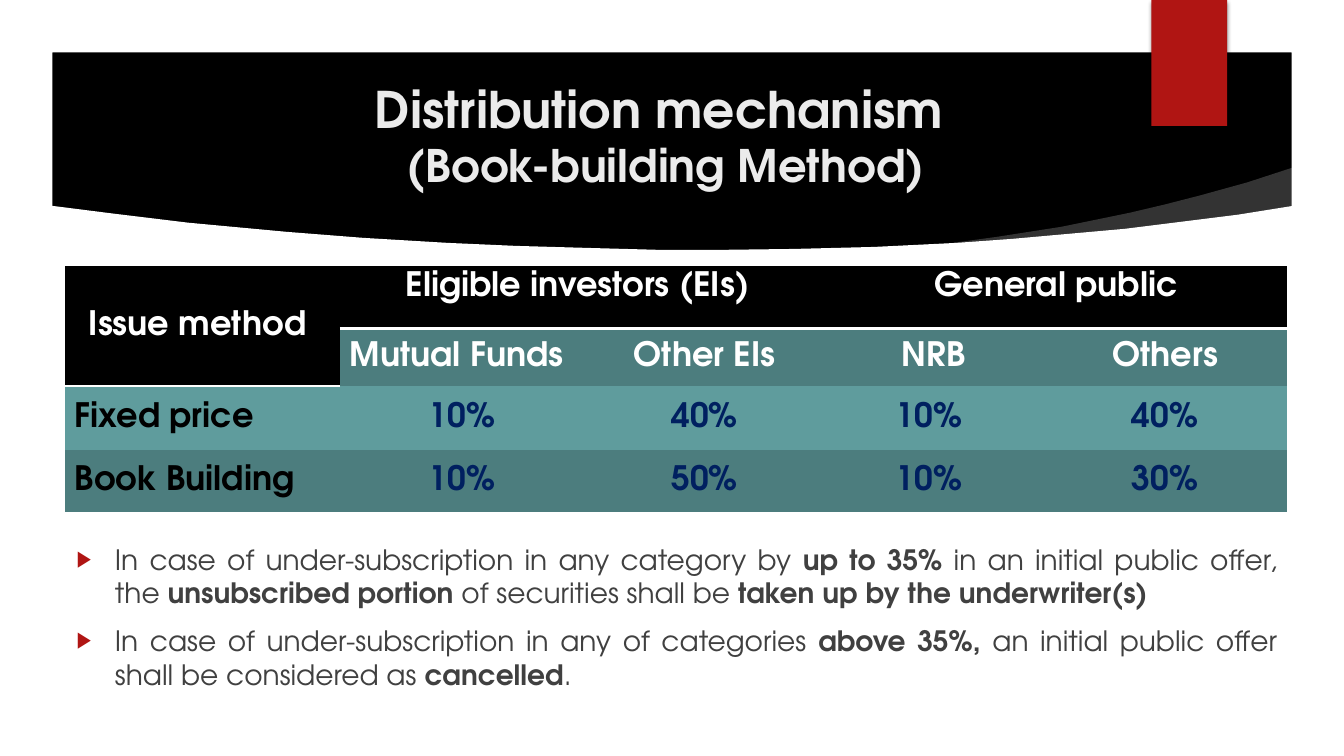
from lxml import etree
from pptx import Presentation
from pptx.dml.color import RGBColor
from pptx.enum.shapes import MSO_SHAPE
from pptx.enum.text import MSO_ANCHOR, MSO_AUTO_SIZE, PP_ALIGN
from pptx.oxml.ns import nsdecls, qn
from pptx.oxml import parse_xml
from pptx.util import Inches, Pt

LEFT, CENTER, JUSTIFY = PP_ALIGN.LEFT, PP_ALIGN.CENTER, PP_ALIGN.JUSTIFY
TOP, MIDDLE = MSO_ANCHOR.TOP, MSO_ANCHOR.MIDDLE
RECT = MSO_SHAPE.RECTANGLE
NO_FIT = MSO_AUTO_SIZE.NONE

FONT = "TeX Gyre Adventor"
WHITE = RGBColor(0xFF, 0xFF, 0xFF)
BLACK = RGBColor(0x00, 0x00, 0x00)
RED = RGBColor(0xB0, 0x15, 0x13)
PALE = RGBColor(0xEB, 0xEB, 0xEB)
GREY = RGBColor(0x40, 0x40, 0x40)
NAVY = RGBColor(0x00, 0x20, 0x60)
TEAL = RGBColor(0x5F, 0x9C, 0x9D)
DARK_TEAL = RGBColor(0x4C, 0x7D, 0x7E)
PLAIN_TABLE = "{2D5ABB26-0587-4C30-8999-92F81FD0307C}"

TITLE = [("Distribution mechanism ", 36), ("(Book-building Method)", 32)]
ROWS = [
    ["Issue method ", "Eligible investors (EIs) ", "", "General public", ""],
    ["", "Mutual Funds", "Other EIs ", "NRB", "Others"],
    ["Fixed price", "10% ", "40% ", "10% ", "40%"],
    ["Book Building", "10% ", "50% ", "10% ", "30%"],
]
MERGES = [((0, 0), (1, 0)), ((0, 1), (0, 2)), ((0, 3), (0, 4))]
ROW_FILLS = [BLACK, DARK_TEAL, TEAL, DARK_TEAL]
COL_WIDTHS = [2.73, 2.52, 2.29, 2.16, 2.43]
ROW_HEIGHTS = [0.62, 0.57, 0.63, 0.62]
BULLETS = [
    [("In case of under-subscription in any category by ", False),
     ("up to 35% ", True), ("in an initial public offer, the ", False),
     ("unsubscribed portion ", True), ("of securities shall be ", False),
     ("taken up by the underwriter(s)", True)],
    [("In case of under-subscription in any of categories ", False),
     ("above 35%, ", True),
     ("an initial public offer shall be considered as ", False),
     ("cancelled", True), (".", False)],
]
SLIDE_W, SLIDE_H = 13.33, 7.5
SLIDE_EDGE = [(0, 0), (0, SLIDE_H), (SLIDE_W, SLIDE_H), (SLIDE_W, 0)]
WINDOW = [(12.81, 6.98), (12.81, 0.52), (0.52, 0.52), (0.52, 6.98)]
PAGE_CURVE = [
    (0.5, 2.04), (1.13, 2.12), (1.87, 2.21), (2.84, 2.3), (3.6, 2.36),
    (4.44, 2.41), (5.12, 2.44), (5.83, 2.46), (6.57, 2.48), (7.08, 2.48),
    (7.87, 2.47), (8.67, 2.45), (9.49, 2.41), (10.04, 2.37), (10.6, 2.32),
    (11.16, 2.27), (11.72, 2.2), (12.28, 2.13), (12.84, 2.04)]
PAGE = PAGE_CURVE + [(12.84, 7), (0.5, 7)]
SWOOSH = [
    (9.34, 2.5), (10.4, 2.46), (11.8, 2.3), (12.9, 2.14), (12.83, 1.66),
    (12.37, 1.81), (11.9, 1.94), (11.55, 2.03), (11.21, 2.11), (10.87, 2.18),
    (10.53, 2.25), (10.21, 2.3), (9.89, 2.35), (9.3, 2.43)]


def add_run(p, text, size=20, color=GREY, bold=True):
    """Add a formatted run to a paragraph."""
    r = p.add_run()
    r.text = text
    r.font.name, r.font.size, r.font.bold = FONT, Pt(size), bold
    r.font.color.rgb = color


def paint(sp, color):
    """Give a shape a flat fill without outline or shadow."""
    sp.fill.solid()
    sp.fill.fore_color.rgb = color
    sp.line.fill.background()
    sp.shadow.inherit = False


def add_outline(s, *contours):
    """Draw one white shape from closed contours given in inches."""
    outlines = [[(Inches(x), Inches(y)) for x, y in c] for c in contours]
    builder = s.shapes.build_freeform(*outlines[0][0])
    for i, corners in enumerate(outlines):
        if i:
            builder.move_to(*corners[0])
        builder.add_line_segments(corners[1:], close=True)
    sp = builder.convert_to_shape()
    paint(sp, WHITE)
    return sp


def add_backdrop(s):
    """Draw the white frame and page around the banner, and the red tab."""
    add_outline(s, SLIDE_EDGE, WINDOW)
    swoosh = add_outline(s, SWOOSH)
    color = swoosh._element.spPr.find(qn("a:solidFill"))[0]
    etree.SubElement(color, qn("a:alpha"), val="20000")
    add_outline(s, PAGE)
    tab = s.shapes.add_shape(RECT, Inches(11.42), 0, Inches(0.75), Inches(1.25))
    paint(tab, RED)
    tab._element.spPr.find(qn("a:effectLst")).append(parse_xml(
        f'<a:outerShdw {nsdecls("a")} blurRad="{Pt(3)}" dist="{Pt(2)}" '
        'dir="5400000"><a:srgbClr val="000000"><a:alpha val="45000"/>'
        '</a:srgbClr></a:outerShdw>'))


def place(s, sp, left, top, width, height):
    """Move a placeholder and bring it to the front."""
    sp.left, sp.top = Inches(left), Inches(top)
    sp.width, sp.height = Inches(width), Inches(height)
    s.shapes._spTree.append(sp._element)
    tf = sp.text_frame
    tf.word_wrap, tf.auto_size, tf.vertical_anchor = True, NO_FIT, TOP
    return tf


def add_title(s):
    """Fill the two-line title."""
    p = place(s, s.shapes.title, 1.78, 0.72, 9.65, 0.77).paragraphs[0]
    p.alignment = CENTER
    for i, (text, size) in enumerate(TITLE):
        if i:
            p.add_line_break()
        add_run(p, text, size=size, color=PALE)


def add_bullets(s):
    """Fill the body placeholder with bulleted paragraphs."""
    tf = place(s, s.placeholders[1], 0.66, 5.33, 12.11, 1.67)
    for i, runs in enumerate(BULLETS):
        p = tf.add_paragraph() if i else tf.paragraphs[0]
        p.alignment, p.space_before, p.space_after = JUSTIFY, Pt(4), Pt(6)
        pPr = p._p.get_or_add_pPr()
        pPr.set("marL", str(Inches(0.38)))
        pPr.set("indent", str(-Inches(0.38)))
        color = etree.SubElement(pPr, qn("a:buClr"))
        etree.SubElement(color, qn("a:srgbClr"), val=str(RED))
        etree.SubElement(pPr, qn("a:buSzPct"), val="80000")
        etree.SubElement(pPr, qn("a:buChar"), char="▶")
        for text, bold in runs:
            add_run(p, text, bold=bold)


def add_bottom_border(cell):
    """Draw a white line under a table cell."""
    cell._tc.get_or_add_tcPr().insert(0, parse_xml(
        f'<a:lnB {nsdecls("a")} w="{Pt(2)}"><a:solidFill>'
        f'<a:srgbClr val="{WHITE}"/></a:solidFill></a:lnB>'))


def add_quota_table(s):
    """Build the table of quotas per issue method."""
    table = s.shapes.add_table(
        len(ROWS), len(COL_WIDTHS), Inches(0.64), Inches(2.64),
        Inches(sum(COL_WIDTHS)), Inches(sum(ROW_HEIGHTS))).table
    table._tbl.tblPr.find(qn("a:tableStyleId")).text = PLAIN_TABLE
    for col, width in zip(table.columns, COL_WIDTHS):
        col.width = Inches(width)
    for row, height in zip(table.rows, ROW_HEIGHTS):
        row.height = Inches(height)
    for start, end in MERGES:
        table.cell(*start).merge(table.cell(*end))
    for i, row in enumerate(ROWS):
        for j, text in enumerate(row):
            cell = table.cell(i, j)
            cell.fill.solid()
            cell.fill.fore_color.rgb = BLACK if i < 2 and j == 0 else ROW_FILLS[i]
            cell.margin_top = Inches(0 if i else 0.05)
            cell.margin_bottom = cell.margin_top
            cell.vertical_anchor = TOP if i == 0 and j else MIDDLE
            if i == 0 or (i, j) == (1, 0):
                add_bottom_border(cell)
            if text:
                p = cell.text_frame.paragraphs[0]
                p.alignment = LEFT if (i > 1 and j == 0) or (i, j) == (1, 1) else CENTER
                color = WHITE if i < 2 else NAVY if j else BLACK
                add_run(p, text, size=24, color=color)


def main():
    """Build and save the slide."""
    prs = Presentation()
    prs.slide_width, prs.slide_height = Inches(SLIDE_W), Inches(SLIDE_H)
    s = prs.slides.add_slide(prs.slide_layouts[1])
    s.background.fill.solid()
    s.background.fill.fore_color.rgb = BLACK
    add_backdrop(s)
    add_title(s)
    add_bullets(s)
    add_quota_table(s)
    prs.save("out.pptx")


if __name__ == "__main__":
    main()
